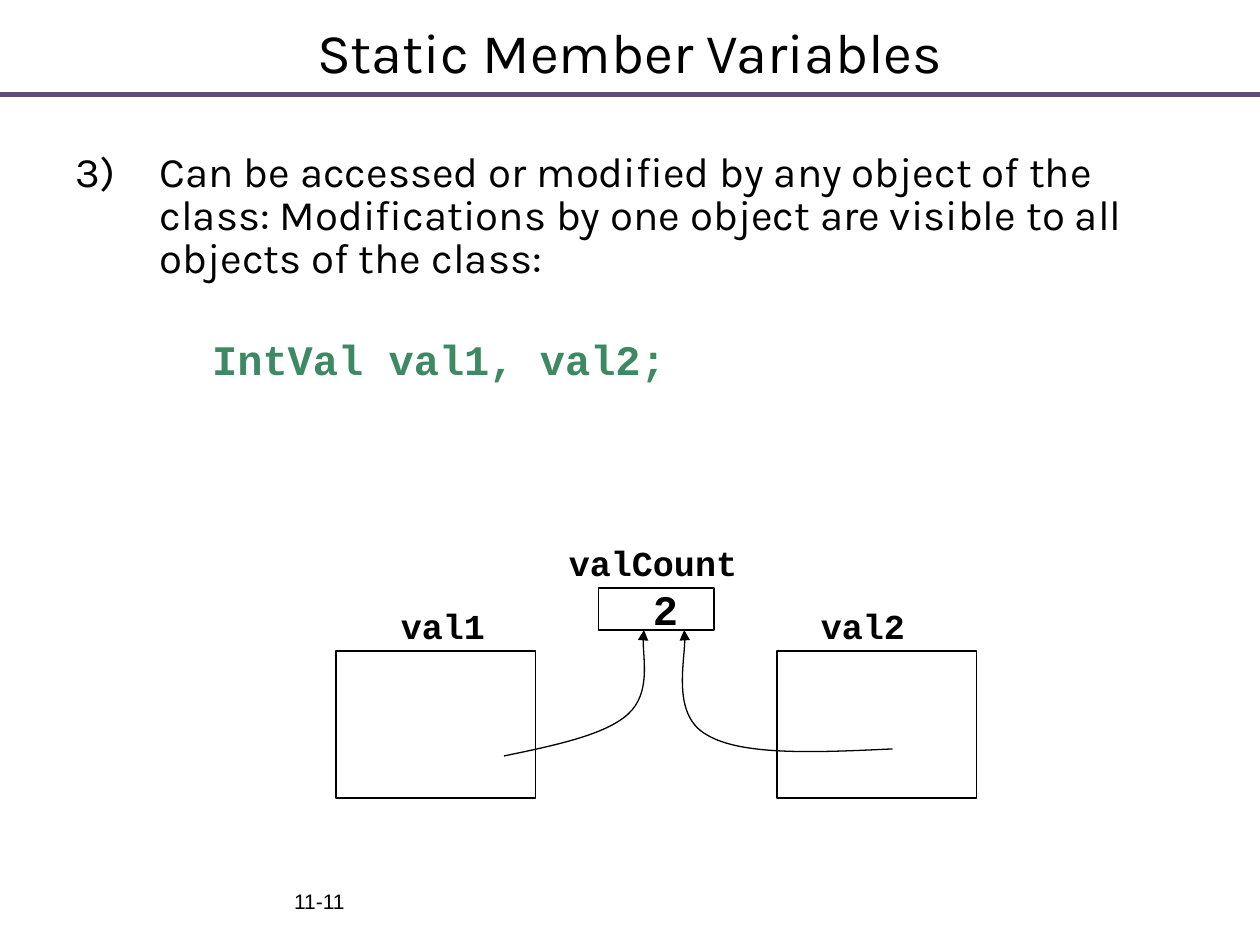
from dataclasses import dataclass

from lxml import etree
from pptx import Presentation
from pptx.dml.color import RGBColor
from pptx.enum import shapes, text
from pptx.oxml import ns
from pptx.util import Pt


@dataclass(frozen=True)
class Theme:
    ink: RGBColor = RGBColor(0, 0, 0)
    code: RGBColor = RGBColor(0x3D, 0x89, 0x63)
    rule: RGBColor = RGBColor(0x5F, 0x49, 0x7A)
    sans: str = "Karla"
    mono: str = "Courier New"
    small: str = "Arial"
    title_size: int = 32
    body_size: int = 24
    label_size: int = 20
    footer_size: int = 12
    thin: float = 0.75
    thick: float = 2.5


THEME = Theme()


def add_run(p, words, font, size, color=THEME.ink, bold=False):
    r = p.add_run()
    r.text = words
    for name, value in dict(name=font, size=Pt(size), bold=bold).items():
        setattr(r.font, name, value)
    r.font.color.rgb = color


def place(sp, left, top, width, height):
    box = dict(left=left, top=top, width=width, height=height)
    for name, value in box.items():
        setattr(sp, name, Pt(value))


def set_format(target, **values):
    for name, value in values.items():
        setattr(target, name, value)


def set_bullet(p, left, indent, tag, **attributes):
    pPr = p._p.get_or_add_pPr()
    pPr.set("marL", str(Pt(left)))
    pPr.set("indent", str(Pt(indent)))
    etree.SubElement(pPr, ns.qn(tag), attributes)


def add_title(s, words):
    sp = s.shapes.title
    place(sp, 21, 3, 678, 52)
    set_format(sp.text_frame, vertical_anchor=text.MSO_ANCHOR.MIDDLE,
               auto_size=text.MSO_AUTO_SIZE.NONE)
    p = sp.text_frame.paragraphs[0]
    p.alignment = text.PP_ALIGN.CENTER
    add_run(p, words, THEME.sans, THEME.title_size)


def add_body(s, point, code):
    sp = s.placeholders[1]
    place(sp, 36, 84, 630, 438)
    tf = sp.text_frame
    set_format(tf, auto_size=text.MSO_AUTO_SIZE.NONE,
               vertical_anchor=text.MSO_ANCHOR.TOP)
    # Numbered point
    p = tf.paragraphs[0]
    set_format(p, line_spacing=0.85, space_before=Pt(2))
    set_bullet(p, 48, -48, "a:buAutoNum", type="arabicParenR", startAt="3")
    add_run(p, point, THEME.sans, THEME.body_size)
    # Code line below it
    p = tf.add_paragraph()
    set_format(p, level=1, line_spacing=0.85, space_before=Pt(34))
    set_bullet(p, 78, 0, "a:buNone")
    add_run(p, code, THEME.mono, THEME.body_size, THEME.code, True)


def add_label(s, words, left, top, width, height, size=THEME.label_size):
    sp = s.shapes.add_textbox(Pt(left), Pt(top), Pt(width), Pt(height))
    set_format(sp.text_frame, word_wrap=False,
               auto_size=text.MSO_AUTO_SIZE.SHAPE_TO_FIT_TEXT)
    add_run(sp.text_frame.paragraphs[0], words, THEME.mono, size, bold=True)


def add_footer(s, words):
    sp = s.shapes.add_textbox(Pt(36), Pt(500.5), Pt(168), Pt(29))
    set_format(sp.text_frame, word_wrap=True,
               vertical_anchor=text.MSO_ANCHOR.MIDDLE)
    p = sp.text_frame.paragraphs[0]
    p.alignment = text.PP_ALIGN.RIGHT
    add_run(p, words, THEME.small, THEME.footer_size)


def outline(sp):
    sp.shadow.inherit = False
    sp.fill.background()
    sp.line.color.rgb = THEME.ink
    sp.line.width = Pt(THEME.thin)


def add_box(s, left, top, width, height):
    sp = s.shapes.add_shape(shapes.MSO_SHAPE.RECTANGLE,
                            Pt(left), Pt(top), Pt(width), Pt(height))
    outline(sp)


def add_curved_arrow(s, start, *points):
    builder = s.shapes.build_freeform(Pt(start[0]), Pt(start[1]))
    builder.add_line_segments([(Pt(x), Pt(y)) for x, y in points], close=False)
    sp = builder.convert_to_shape()
    outline(sp)
    # Every three points make one cubic segment
    contour = sp._element.find(".//" + ns.qn("a:path"))
    steps = contour.findall(ns.qn("a:lnTo"))
    for i in range(0, len(steps), 3):
        curve = etree.SubElement(contour, ns.qn("a:cubicBezTo"))
        for step in steps[i:i + 3]:
            curve.append(step[0])
            contour.remove(step)
    etree.SubElement(sp.line._get_or_add_ln(), ns.qn("a:tailEnd"),
                     type="triangle")


def add_rule(s, y, width):
    line = s.shapes.add_connector(shapes.MSO_CONNECTOR.STRAIGHT,
                                  0, Pt(y), Pt(width), Pt(y))
    line.line.color.rgb = THEME.rule
    line.line.width = Pt(THEME.thick)
    etree.SubElement(line._element.spPr, ns.qn("a:effectLst"))


def main():
    prs = Presentation()
    prs.slide_width, prs.slide_height = Pt(720), Pt(540)
    s = prs.slides.add_slide(prs.slide_layouts[1])

    # Heading, text and page number
    add_title(s, "Static Member Variables")
    add_body(s, "Can be accessed or modified by any object of the class: "
                "Modifications by one object are visible to all objects "
                "of the class:", "IntVal val1, val2;")
    add_footer(s, "11-11")

    # Two objects
    for name, box_left, label_left in (("val1", 192, 222), ("val2", 444, 462)):
        add_box(s, box_left, 372, 114, 84)
        add_label(s, name, label_left, 342, 64, 31)

    # The static member they share
    add_box(s, 342, 336, 66, 24)
    add_label(s, "valCount", 318, 306, 112, 31)
    add_curved_arrow(s, (288, 432), (317, 426), (346, 420), (359, 408),
                     (372, 396), (366, 368), (368, 360))
    add_curved_arrow(s, (510, 428), (467, 430), (424, 432), (404, 420),
                     (384, 409), (393, 370), (391, 360))
    add_label(s, "2", 366, 330, 29, 36, THEME.body_size)

    # Rule under the title
    add_rule(s, 54, 720)
    prs.save("out.pptx")


if __name__ == "__main__":
    main()
